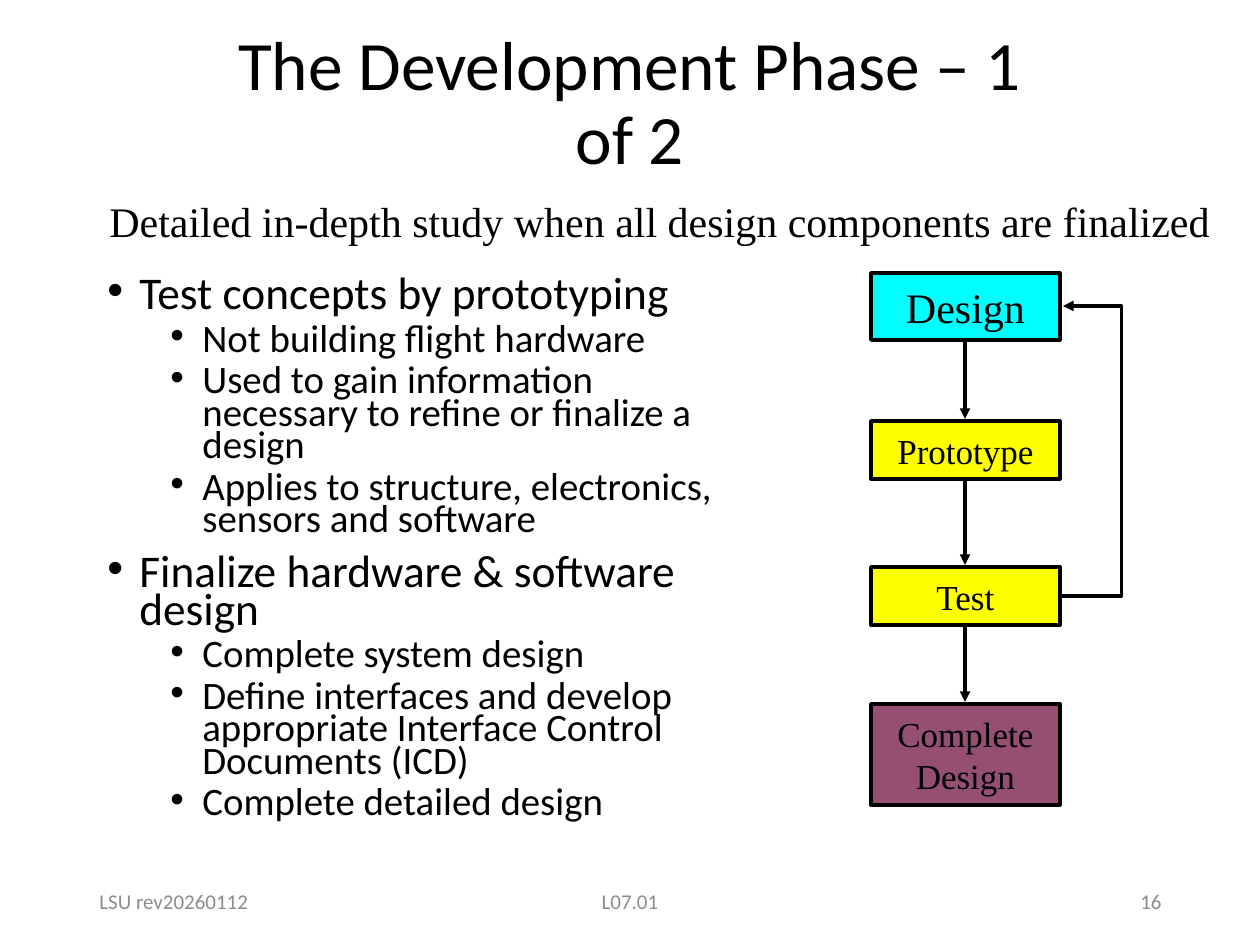
from dataclasses import dataclass
from itertools import pairwise

from lxml import etree
from pptx import Presentation
from pptx.dml.color import RGBColor
from pptx.enum.shapes import MSO_CONNECTOR, MSO_SHAPE
from pptx.enum.text import MSO_ANCHOR, PP_ALIGN
from pptx.oxml.ns import qn
from pptx.util import Emu, Pt

PX_PER_INCH = 126
SLIDE_W, SLIDE_H = 1260, 945
RECT = MSO_SHAPE.RECTANGLE
STRAIGHT, ELBOW = MSO_CONNECTOR.STRAIGHT, MSO_CONNECTOR.ELBOW
TOP, MIDDLE = MSO_ANCHOR.TOP, MSO_ANCHOR.MIDDLE
LEFT, CENTER, RIGHT = PP_ALIGN.LEFT, PP_ALIGN.CENTER, PP_ALIGN.RIGHT

BLACK = RGBColor(0x00, 0x00, 0x00)
GRAY = RGBColor(0x8C, 0x8C, 0x8C)
CYAN = RGBColor(0x00, 0xFF, 0xFF)
YELLOW = RGBColor(0xFF, 0xFF, 0x00)
PLUM = RGBColor(0x95, 0x4F, 0x72)
SANS, SERIF = "Calibri", "Times New Roman"

STEP_LEFT, STEP_W = 871, 189
LOOP_REACH = 66


@dataclass(frozen=True)
class Step:
    text: str
    top: int
    height: int
    fill: RGBColor
    size: int = 20

    @property
    def bottom(self) -> int:
        return self.top + self.height

    @property
    def middle(self) -> int:
        return self.top + self.height // 2


@dataclass(frozen=True)
class Label:
    text: str
    left: int
    top: int
    width: int
    height: int
    size: int
    font: str
    color: RGBColor
    align: PP_ALIGN = LEFT
    anchor: MSO_ANCHOR = MIDDLE


@dataclass(frozen=True)
class Level:
    size: float
    margin: int
    space_before: int


STEPS = [
    Step("Design", 273, 67, CYAN, 24),
    Step("Prototype", 421, 58, YELLOW),
    Step("Test", 567, 58, YELLOW),
    Step("Complete Design", 704, 101, PLUM),
]
LABELS = [
    Label("Detailed in-depth study when all design components are finalized",
          97, 189, 1144, 63, 24, SERIF, BLACK, anchor=TOP),
    Label("LSU rev20260112", 87, 876, 284, 50, 12, SANS, GRAY),
    Label("L07.01", 417, 876, 426, 50, 12, SANS, GRAY, CENTER),
    Label("16", 890, 876, 284, 50, 12, SANS, GRAY, RIGHT),
]
LEVELS = [Level(25.9, 32, 10), Level(22.2, 95, 5)]
BULLETS = [
    (0, "Test concepts by prototyping"),
    (1, "Not building flight hardware"),
    (1, "Used to gain information necessary to refine or finalize a design"),
    (1, "Applies to structure, electronics, sensors and software"),
    (0, "Finalize hardware & software design"),
    (1, "Complete system design"),
    (1, "Define interfaces and develop appropriate Interface Control Documents (ICD)"),
    (1, "Complete detailed design"),
]


def px(n: int) -> Emu:
    return Emu(round(n * 914400 / PX_PER_INCH))


def add_run(p, text: str, size: float, font: str, color: RGBColor) -> None:
    r = p.add_run()
    r.text = text
    r.font.size = Pt(size)
    r.font.name = font
    r.font.color.rgb = color


def add_text_frame(s, left: int, top: int, width: int, height: int):
    tf = s.shapes.add_textbox(px(left), px(top), px(width), px(height)).text_frame
    tf.word_wrap = True
    return tf


def add_title(s, text: str) -> None:
    title = s.shapes.title
    title.left, title.top, title.width, title.height = px(198), px(26), px(864), px(158)
    title.text_frame.vertical_anchor = MIDDLE
    p = title.text_frame.paragraphs[0]
    p.alignment = CENTER
    p.line_spacing = 0.9
    add_run(p, text, 39.6, SANS, BLACK)


def add_label(s, label: Label) -> None:
    tf = add_text_frame(s, label.left, label.top, label.width, label.height)
    tf.vertical_anchor = label.anchor
    p = tf.paragraphs[0]
    p.alignment = label.align
    add_run(p, label.text, label.size, label.font, label.color)


def add_bullets(s) -> None:
    tf = add_text_frame(s, 95, 273, 650, 567)
    for i, (depth, text) in enumerate(BULLETS):
        level = LEVELS[depth]
        p = tf.add_paragraph() if i else tf.paragraphs[0]
        p.level = depth
        pPr = p._p.get_or_add_pPr()
        pPr.set("marL", str(px(level.margin)))
        pPr.set("indent", str(-px(32)))
        etree.SubElement(pPr, qn("a:buFont"), typeface="Arial")
        etree.SubElement(pPr, qn("a:buChar"), char="•")
        p.line_spacing = 0.7
        if i:
            p.space_before = Pt(level.space_before)
        add_run(p, text, level.size, SANS, BLACK)


def add_step(s, step: Step) -> None:
    sp = s.shapes.add_shape(RECT, px(STEP_LEFT), px(step.top), px(STEP_W), px(step.height))
    sp.shadow.inherit = False
    sp.fill.solid()
    sp.fill.fore_color.rgb = step.fill
    sp.line.color.rgb = BLACK
    sp.line.width = Pt(2)
    tf = sp.text_frame
    tf.word_wrap = True
    tf.vertical_anchor = MIDDLE
    p = tf.paragraphs[0]
    p.alignment = CENTER
    add_run(p, step.text, step.size, SERIF, BLACK)


def add_arrow(s, kind: MSO_CONNECTOR, x1: int, y1: int, x2: int, y2: int):
    arrow = s.shapes.add_connector(kind, px(x1), px(y1), px(x2), px(y2))
    arrow.line.color.rgb = BLACK
    arrow.line.width = Pt(2)
    etree.SubElement(arrow.line._get_or_add_ln(), qn("a:tailEnd"), type="triangle")
    etree.SubElement(arrow._element.spPr, qn("a:effectLst"))
    return arrow


def add_loop(s, start: Step, end: Step) -> None:
    """Lead back from one step to an earlier one, around the right side."""
    x = STEP_LEFT + STEP_W + 2
    loop = add_arrow(s, ELBOW, x, start.middle, x + 1, end.middle)
    # The bend is a share of the connector's width, which is one px.
    guides = loop._element.spPr.find(qn("a:prstGeom")).get_or_add_avLst()
    reach = (LOOP_REACH - 6) * 100000
    etree.SubElement(guides, qn("a:gd"), name="adj1", fmla=f"val {reach}")


def main() -> None:
    prs = Presentation()
    prs.slide_width, prs.slide_height = px(SLIDE_W), px(SLIDE_H)
    s = prs.slides.add_slide(prs.slide_layouts[5])
    add_title(s, "The Development Phase – 1 of 2")
    add_bullets(s)
    for label in LABELS:
        add_label(s, label)
    for step in STEPS:
        add_step(s, step)
    center = STEP_LEFT + STEP_W // 2
    for upper, lower in pairwise(STEPS):
        add_arrow(s, STRAIGHT, center, upper.bottom + 1, center, lower.top - 2)
    add_loop(s, STEPS[2], STEPS[0])
    prs.save("out.pptx")


if __name__ == "__main__":
    main()
